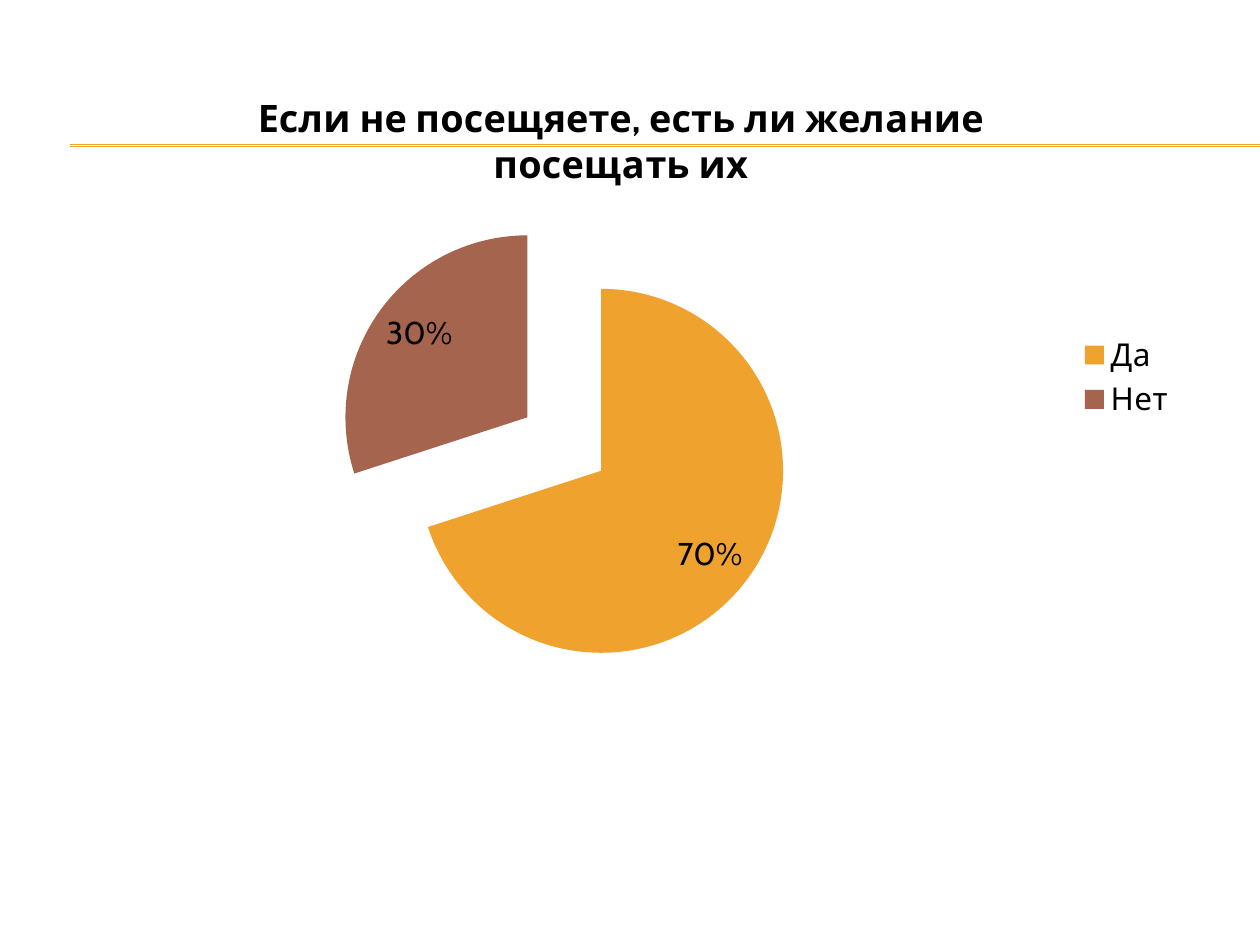
from lxml import etree
from pptx import Presentation
from pptx.chart.data import CategoryChartData
from pptx.dml.color import RGBColor
from pptx.enum.chart import XL_CHART_TYPE, XL_LABEL_POSITION, XL_LEGEND_POSITION
from pptx.enum.shapes import MSO_CONNECTOR
from pptx.oxml.ns import qn
from pptx.util import Cm, Pt

PIE = XL_CHART_TYPE.PIE
STRAIGHT = MSO_CONNECTOR.STRAIGHT
INSIDE_END = XL_LABEL_POSITION.INSIDE_END
LEGEND_RIGHT = XL_LEGEND_POSITION.RIGHT

QUESTION = "Если не посещяете, есть ли желание посещать их"
ANSWERS = [("Да", 70, "F0A22E"), ("Нет", 30, "A5644E")]
EXPLOSION = 25

THEME = {"font": "Cabin", "text": "000000", "rule": "F0A22E",
         "body": 18, "title": 21.6, "rule_width": 0.75}

SLIDE_W, SLIDE_H = 25.4, 19.05
RULE_LEFT = 1.42
RULE_TOPS = (2.92, 2.95)
CHART_BOX = (1.09, 1.32, 22.86, 12.57)


def style_font(font, size, bold=False):
    font.name = THEME["font"]
    font.size = Pt(size)
    font.bold = bold
    font.color.rgb = RGBColor.from_string(THEME["text"])


def add_rule(s, top):
    line = s.shapes.add_connector(STRAIGHT, Cm(RULE_LEFT), Cm(top), Cm(SLIDE_W), Cm(top))
    line.line.color.rgb = RGBColor.from_string(THEME["rule"])
    line.line.width = Pt(THEME["rule_width"])
    etree.SubElement(line._element.spPr, qn("a:effectLst"))


def explode(series, percent):
    """Pull every slice out from the centre of the pie."""
    explosion = etree.Element(qn("c:explosion"))
    explosion.set("val", str(percent))
    series._element.get_or_add_spPr().addnext(explosion)


def add_answer_pie(s):
    data = CategoryChartData()
    data.categories = [name for name, _, _ in ANSWERS]
    data.add_series(QUESTION, [share for _, share, _ in ANSWERS])
    chart = s.shapes.add_chart(PIE, *map(Cm, CHART_BOX), data).chart
    style_font(chart.font, THEME["body"])

    chart.has_title = True
    chart.chart_title.include_in_layout = False
    r = chart.chart_title.text_frame.paragraphs[0].add_run()
    r.text = QUESTION
    style_font(r.font, THEME["title"], bold=True)

    chart.has_legend = True
    chart.legend.position = LEGEND_RIGHT
    chart.legend.include_in_layout = False
    style_font(chart.legend.font, THEME["body"])

    plot = chart.plots[0]
    plot.vary_by_categories = True
    series = plot.series[0]
    explode(series, EXPLOSION)
    for i, (_, _, color) in enumerate(ANSWERS):
        fill = series.points[i].format.fill
        fill.solid()
        fill.fore_color.rgb = RGBColor.from_string(color)

    plot.has_data_labels = True
    labels = plot.data_labels
    labels.show_value = False
    labels.show_percentage = True
    labels.number_format = "0%"
    labels.number_format_is_linked = False
    labels.position = INSIDE_END
    style_font(labels.font, THEME["body"])


def main():
    prs = Presentation()
    prs.slide_width, prs.slide_height = Cm(SLIDE_W), Cm(SLIDE_H)
    s = prs.slides.add_slide(prs.slide_layouts[6])
    for top in RULE_TOPS:
        add_rule(s, top)
    add_answer_pie(s)
    prs.save("out.pptx")


if __name__ == "__main__":
    main()
